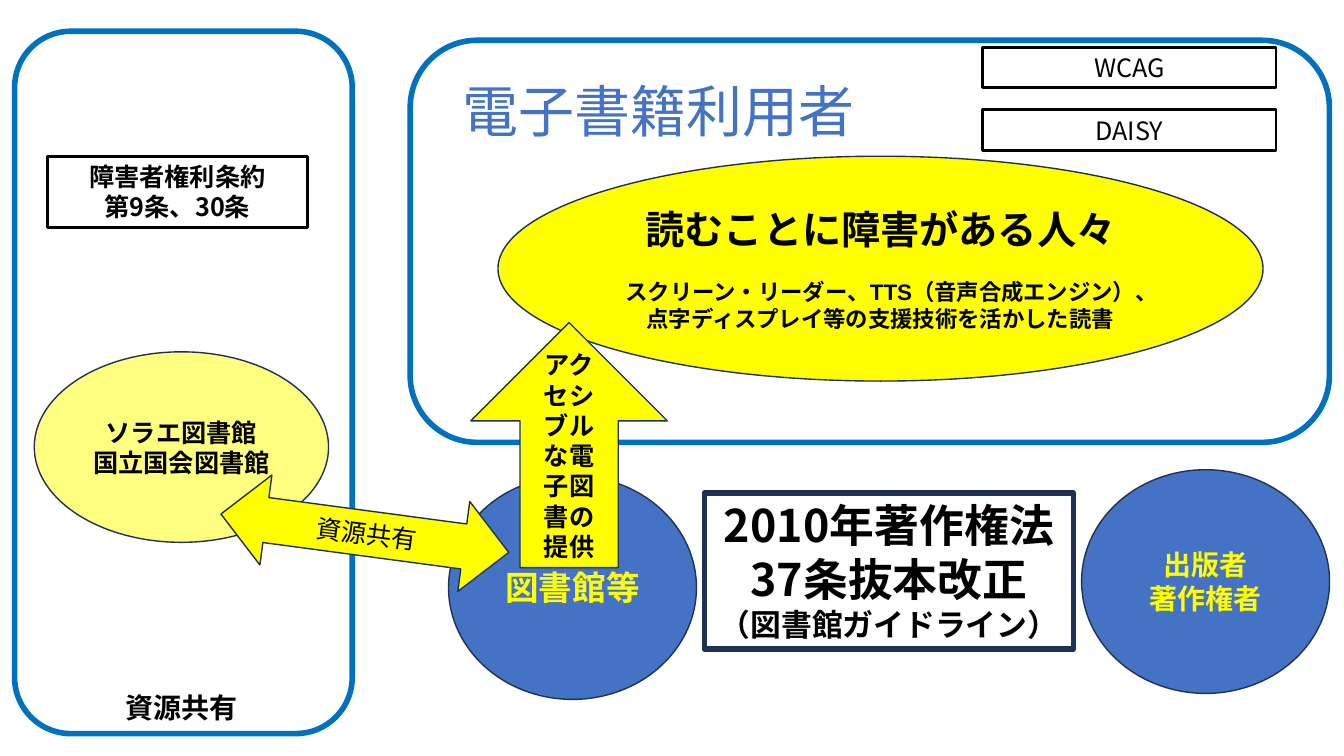
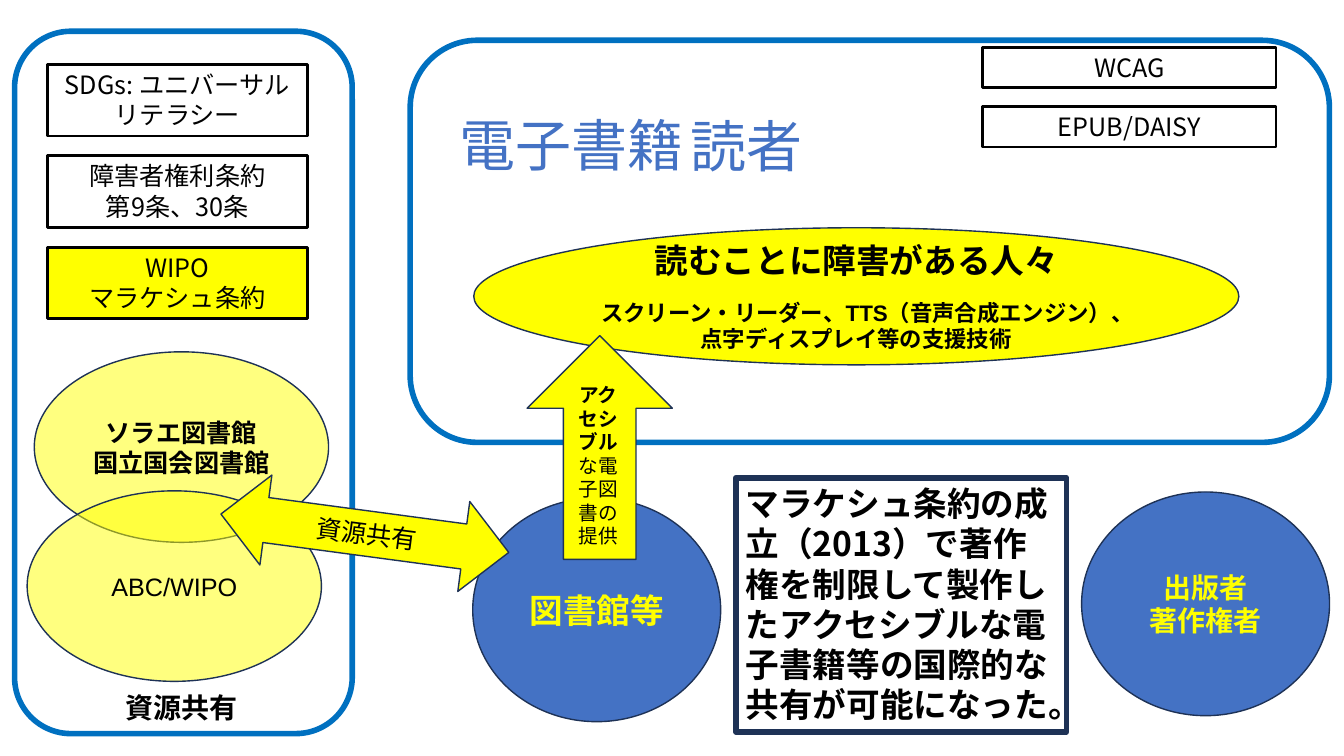
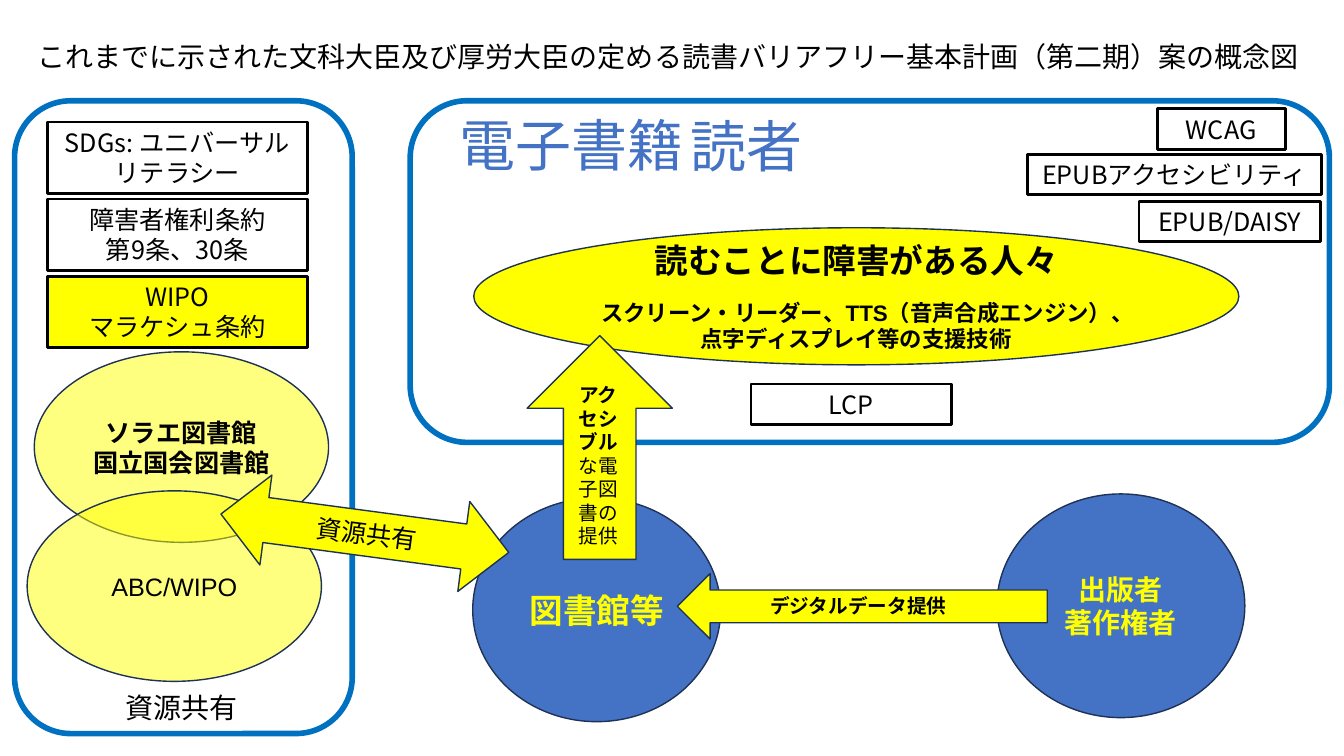
"""Build three concept diagrams about accessible e-book provision."""
import pptx
import pptx.util
import pptx.dml.color
import pptx.enum.lang
import pptx.enum.shapes
import pptx.enum.text
import pptx.oxml
import pptx.oxml.ns

Pt = pptx.util.Pt
SHAPES = pptx.enum.shapes.MSO_SHAPE
ALIGN = pptx.enum.text.PP_ALIGN
ANCHOR = pptx.enum.text.MSO_ANCHOR
YELLOW, BLUE, BLACK, NAVY, PANEL_BLUE = "FFFF00", "4472C4", "000000", "1E3256", "0070C0"
ARIAL, NOTO = "Arial", "Noto Sans CJK JP"
LINE_HEIGHT = 1.2

BASE = dict(shape=None, fill=None, alpha=None, outline=None, width=1, size=18, bold=False,
            colour=BLACK, font=NOTO, align=ALIGN.CENTER, anchor=ANCHOR.TOP, rotation=0)
OVAL = dict(shape=SHAPES.OVAL, outline=NAVY, font=ARIAL, anchor=ANCHOR.MIDDLE)
ARROW = dict(shape=SHAPES.RIGHT_ARROW, fill=YELLOW, outline=NAVY)
STYLES = {
    "panel": dict(shape=SHAPES.ROUNDED_RECTANGLE, outline=PANEL_BLUE, width=4),
    "actor": dict(OVAL, fill=BLUE, colour=YELLOW, bold=True, size=20),
    "network": dict(OVAL, fill=YELLOW, alpha=50),
    "readers": dict(OVAL, fill=YELLOW, bold=True, size=16),
    "card": dict(shape=SHAPES.RECTANGLE, outline=BLACK, width=2),
    "law": dict(shape=SHAPES.RECTANGLE, outline=NAVY, width=4, bold=True),
    "up arrow": dict(ARROW, rotation=270),
    "left arrow": dict(ARROW, rotation=180),
    "sharing arrow": dict(ARROW, shape=SHAPES.UP_DOWN_ARROW, rotation=277.6),
    "sharing text": dict(rotation=7.3, align=ALIGN.LEFT),
    "title": dict(size=40, colour=BLUE, font=ARIAL, align=ALIGN.LEFT),
    "caption": dict(size=20, font=ARIAL),
    "heading": dict(size=20, align=ALIGN.LEFT),
    "label": {},
}

SDGS = ["SDGs: ユニバーサルリテラシー"]
CONVENTION = ["障害者権利条約", "第9条、30条"]
TREATY = ["WIPO", "マラケシュ条約"]
PEOPLE = "読むことに障害がある人々"
TOOLS = "スクリーン・リーダー、TTS（音声合成エンジン）、点字ディスプレイ等の支援技術"
PROVISION = ("アクセシブル", "な電子図書の提供")


def item(style, box, lines=(), **changes):
    """Describe one shape: style name, box in points, lines of text."""
    return style, box, lines, changes


def left_panel(top):
    """Describe the resource sharing panel, which ends at a fixed bottom."""
    return item("panel", (10.4, top, 241.2, 524 - top))


def right_panel(top):
    """Describe the readers' panel, which ends at a fixed bottom."""
    return item("panel", (293, top, 656.6, 316 - top))


def actors(library, publisher):
    """Describe the library and publisher circles from their corners."""
    size = (177.1, 159.8)
    return [item("actor", library + size, ["図書館等"], size=24),
            item("actor", publisher + size, ["出版者", "著作権者"])]


def left_cards(top, pitch, cards):
    """Describe evenly spaced cards in the left panel."""
    return [item("card", (33.8, top + index * pitch, 185.8, 51.1), lines, **changes)
            for index, (lines, changes) in enumerate(cards)]


def right_cards(cards):
    """Describe one-line cards given as text, left, top and width."""
    return [item("card", (left, top, width, 28.8), [text]) for text, left, top, width in cards]


LIBRARIES = item("network", (24.5, 251.3, 210.2, 136.1), ["ソラエ図書館", "国立国会図書館"], bold=True)
ABC = item("network", (19.4, 350.6, 210.2, 136.1), ["ABC/WIPO"])
SHARING_ARROW = item("sharing arrow", (228.2, 277.2, 64.8, 207.4))
SHARING_TEXT = item("sharing text", (218.9, 367.9, 103, 28.8), ["資源共有"])
CAPTION_BOX = (2.2, 489.6, 254.9, 31.7)
CAPTION = item("caption", CAPTION_BOX, ["資源共有"], bold=True)
LATER_CARDS = [(SDGS, {}), (CONVENTION, {}), (TREATY, dict(fill=YELLOW))]
LATER_READERS = item("readers", (338.4, 162.7, 546.5, 97.9),
                     [dict(text=PEOPLE, size=24), dict(text=TOOLS, before=13)])
LATER_UP_ARROW = item("up arrow", (348.5, 267.8, 159.8, 103.7))
LATER_TITLE = [item("title", (486, 76.3, 146.9, 55.4), ["読者"]),
               item("title", (321.1, 75.6, 177.8, 55.4), ["電子書籍"])]
LATER_PROVISION = item("label", (401, 270, 52.6, 126),
                       [dict(runs=[(PROVISION[0], True), (PROVISION[1], False)])], size=14)

SLIDES = [
    [left_panel(22.3), *actors((320.4, 339.8), (772.6, 335.5)), LIBRARIES, SHARING_ARROW,
     *left_cards(111.6, 0, [(CONVENTION, dict(bold=True))]),
     *right_cards([("WCAG", 702, 33.8, 209.5), ("DAISY", 702, 78.5, 209.5)]),
     item("readers", (355.7, 111.6, 546.5, 160.6),
          [dict(text=PEOPLE, size=28), dict(text=TOOLS + "を活かした読書", before=19)]),
     right_panel(28.8),
     item("up arrow", (319, 247.7, 175, 140.4)),
     CAPTION, SHARING_TEXT,
     item("label", (380.2, 246.2, 52.6, 159.8), ["".join(PROVISION)], bold=True),
     item("title", (323.3, 51.1, 319.7, 55.4), ["電子書籍利用者"]),
     item("law", (503.3, 352.1, 263.5, 111.6),
          ["2010年著作権法", "37条抜本改正", dict(text="（図書館ガイドライン）", size=22)], size=32)],
    [left_panel(22.3), *actors((337.7, 355.7), (772.6, 351.4)), LIBRARIES, ABC, SHARING_ARROW,
     *left_cards(46.1, 65.2, LATER_CARDS),
     *right_cards([("WCAG", 702, 33.8, 209.5), ("EPUB/DAISY", 702, 76.3, 209.5)]),
     LATER_READERS, right_panel(28.8), LATER_UP_ARROW, CAPTION, SHARING_TEXT,
     LATER_PROVISION, *LATER_TITLE,
     item("law", (525.6, 341.3, 236.2, 181.4),
          ["マラケシュ条約の成立（2013）で著作権を制限して製作したアクセシブルな電子書籍等の"
           "国際的な共有が可能になった。"], size=24, align=ALIGN.LEFT)],
    [left_panel(72), *actors((337.7, 355.7), (712.1, 352.8)),
     item("left arrow", (483.8, 409.7, 264.2, 46.8)), LIBRARIES, ABC, SHARING_ARROW,
     *left_cards(87.1, 55.1, LATER_CARDS),
     *right_cards([("WCAG", 826.6, 77.8, 91.4), ("EPUBアクセシビリティ", 733.7, 110.2, 210.2),
                   ("EPUB/DAISY", 813.6, 144, 129.6)]),
     LATER_READERS, right_panel(72), LATER_UP_ARROW,
     item("caption", CAPTION_BOX, ["資源共有"]),
     item("label", (519.1, 420.5, 187.9, 24.5), ["デジタルデータ提供"], size=14, bold=True),
     SHARING_TEXT, LATER_PROVISION, *LATER_TITLE,
     *right_cards([("LCP", 536.4, 274.3, 143.3)]),
     item("heading", (19.4, 24.5, 924.5, 31.7),
          ["これまでに示された文科大臣及び厚労大臣の定める読書バリアフリー基本計画（第二期）案の概念図"])],
]


def rgb(value):
    """Turn a hex string into a colour."""
    return pptx.dml.color.RGBColor.from_string(value)


def paint(shape, style):
    """Apply fill, transparency and outline."""
    shape.shadow.inherit = False
    if style["fill"]:
        shape.fill.solid()
        shape.fill.fore_color.rgb = rgb(style["fill"])
    else:
        shape.fill.background()
    if style["alpha"]:
        colour = shape._element.spPr.find(".//" + pptx.oxml.ns.qn("a:srgbClr"))
        alpha = colour.makeelement(pptx.oxml.ns.qn("a:alpha"), {"val": str(style["alpha"] * 1000)})
        colour.append(alpha)
    shape.line.color.rgb = rgb(style["outline"])
    shape.line.width = Pt(style["width"])


def format_run(run, style, size, bold):
    """Set Latin and East Asian fonts, size, weight and colour."""
    font = run.font
    font.name = style["font"]
    font.size = Pt(size)
    font.bold = bold
    font.color.rgb = rgb(style["colour"])
    font.language_id = pptx.enum.lang.MSO_LANGUAGE_ID.JAPANESE
    properties = run._r.get_or_add_rPr()
    east_asian = properties.makeelement(pptx.oxml.ns.qn("a:ea"), {"typeface": NOTO})
    properties.find(pptx.oxml.ns.qn("a:latin")).addnext(east_asian)


def write(text_frame, lines, style):
    """Write one paragraph for each line."""
    text_frame.word_wrap = True
    text_frame.vertical_anchor = style["anchor"]
    for index, line in enumerate(lines):
        line = dict(text=line) if isinstance(line, str) else line
        paragraph = text_frame.add_paragraph() if index else text_frame.paragraphs[0]
        size = line.get("size", style["size"])
        paragraph.alignment = style["align"]
        paragraph.line_spacing = Pt(size * LINE_HEIGHT)
        paragraph.space_before = Pt(line.get("before", 0))
        for text, bold in line.get("runs") or [(line["text"], style["bold"])]:
            run = paragraph.add_run()
            run.text = text
            format_run(run, style, size, bold)


def draw(slide, name, box, lines, changes):
    """Draw one described shape."""
    style = {**BASE, **STYLES[name], **changes}
    place = [Pt(value) for value in box]
    if style["shape"] is None:
        shape = slide.shapes.add_textbox(*place)
    else:
        shape = slide.shapes.add_shape(style["shape"], *place)
        paint(shape, style)
    shape.rotation = style["rotation"]
    if lines:
        write(shape.text_frame, lines, style)


def main():
    """Build and save the presentation."""
    presentation = pptx.Presentation()
    presentation.slide_width, presentation.slide_height = Pt(960), Pt(540)
    for items in SLIDES:
        slide = presentation.slides.add_slide(presentation.slide_layouts[6])
        for entry in items:
            draw(slide, *entry)
    presentation.save("out.pptx")


if __name__ == "__main__":
    main()
